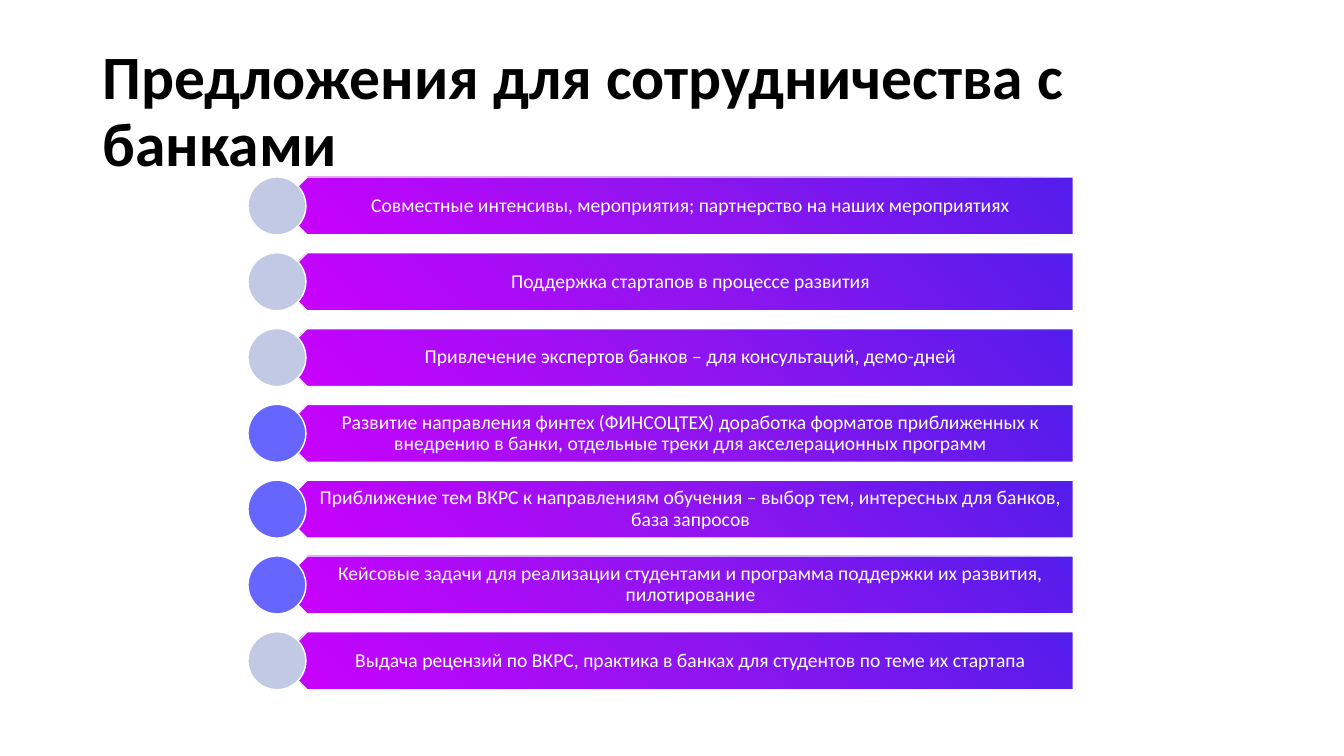
from copy import deepcopy
from dataclasses import dataclass

from pptx import Presentation
from pptx.dml.color import RGBColor
from pptx.enum.shapes import MSO_SHAPE
from pptx.enum.text import MSO_ANCHOR, PP_ALIGN
from pptx.oxml.ns import qn
from pptx.util import Cm, Pt


@dataclass(frozen=True)
class Theme:
    font: str = "Calibri"
    title_size: int = 44
    body_size: int = 14
    black: str = "000000"
    white: str = "FFFFFF"
    muted: str = "C1C9E4"
    accent: str = "6666FF"
    gradient: tuple = ((0, "531DEB"), (0.5, "9214F0"), (1, "CC00FF"))


theme = Theme()


def add_text(page, text, *, left, top, width, height, size, color, bold=False,
             align=PP_ALIGN.LEFT, margins=(0.25, 0.13, 0.25, 0.13)):
    box = page.shapes.add_textbox(Cm(left), Cm(top), Cm(width), Cm(height))
    frame = box.text_frame
    frame.word_wrap = True
    frame.vertical_anchor = MSO_ANCHOR.MIDDLE
    (frame.margin_left, frame.margin_top,
     frame.margin_right, frame.margin_bottom) = map(Cm, margins)
    para = frame.paragraphs[0]
    para.alignment = align
    para.line_spacing = 0.9
    span = para.add_run()
    span.text = text
    span.font.name = theme.font
    span.font.size = Pt(size)
    span.font.bold = bold
    span.font.color.rgb = RGBColor.from_string(color)


def add_outlined(page, kind, left, top, width, height):
    """Add a preset shape with a thin white outline and no shadow."""
    shape = page.shapes.add_shape(kind, Cm(left), Cm(top), Cm(width), Cm(height))
    shape.shadow.inherit = False
    shape.line.color.rgb = RGBColor.from_string(theme.white)
    shape.line.width = Pt(1)
    return shape


deck = Presentation()
deck.slide_width, deck.slide_height = Cm(33.87), Cm(19.05)
page = deck.slides.add_slide(deck.slide_layouts[6])

add_text(page, "Предложения для сотрудничества с банками",
         left=2.33, top=1.01, width=29.21, height=3.68,
         size=theme.title_size, color=theme.black, bold=True)

proposals = [
    ("Совместные интенсивы, мероприятия; партнерство на наших мероприятиях", theme.muted),
    ("Поддержка стартапов в процессе развития", theme.muted),
    ("Привлечение экспертов банков – для консультаций, демо-дней", theme.muted),
    ("Развитие направления финтех (ФИНСОЦТЕХ) доработка форматов приближенных к "
     "внедрению в банки, отдельные треки для акселерационных программ", theme.accent),
    ("Приближение тем ВКРС к направлениям обучения – выбор тем, интересных для банков, "
     "база запросов", theme.accent),
    ("Кейсовые задачи для реализации студентами и программа поддержки их развития, "
     "пилотирование", theme.accent),
    ("Выдача рецензий по ВКРС, практика в банках для студентов по теме их стартапа",
     theme.muted),
]
first_top, pitch, row_height = 4.46, 1.91, 1.46

for row, (proposal, circle_color) in enumerate(proposals):
    top = first_top + row * pitch

    plate = add_outlined(page, MSO_SHAPE.PENTAGON, 7.01, top, 20.04, row_height)
    plate.rotation = 180
    plate.fill.gradient()
    plate.fill.gradient_angle = 45
    stop_list = plate.fill._xPr.find(qn("a:gradFill")).find(qn("a:gsLst"))
    stop_list.insert(1, deepcopy(stop_list[0]))
    for stop, (position, color) in zip(plate.fill.gradient_stops, theme.gradient):
        stop.position = position
        stop.color.rgb = RGBColor.from_string(color)

    add_text(page, proposal, left=7.37, top=top, width=19.69, height=row_height,
             size=theme.body_size, color=theme.white, align=PP_ALIGN.CENTER,
             margins=(0.66, 0.15, 0.28, 0.15))

    circle = add_outlined(page, MSO_SHAPE.OVAL, 6.25, top, row_height, row_height)
    circle.fill.solid()
    circle.fill.fore_color.rgb = RGBColor.from_string(circle_color)

deck.save("out.pptx")
